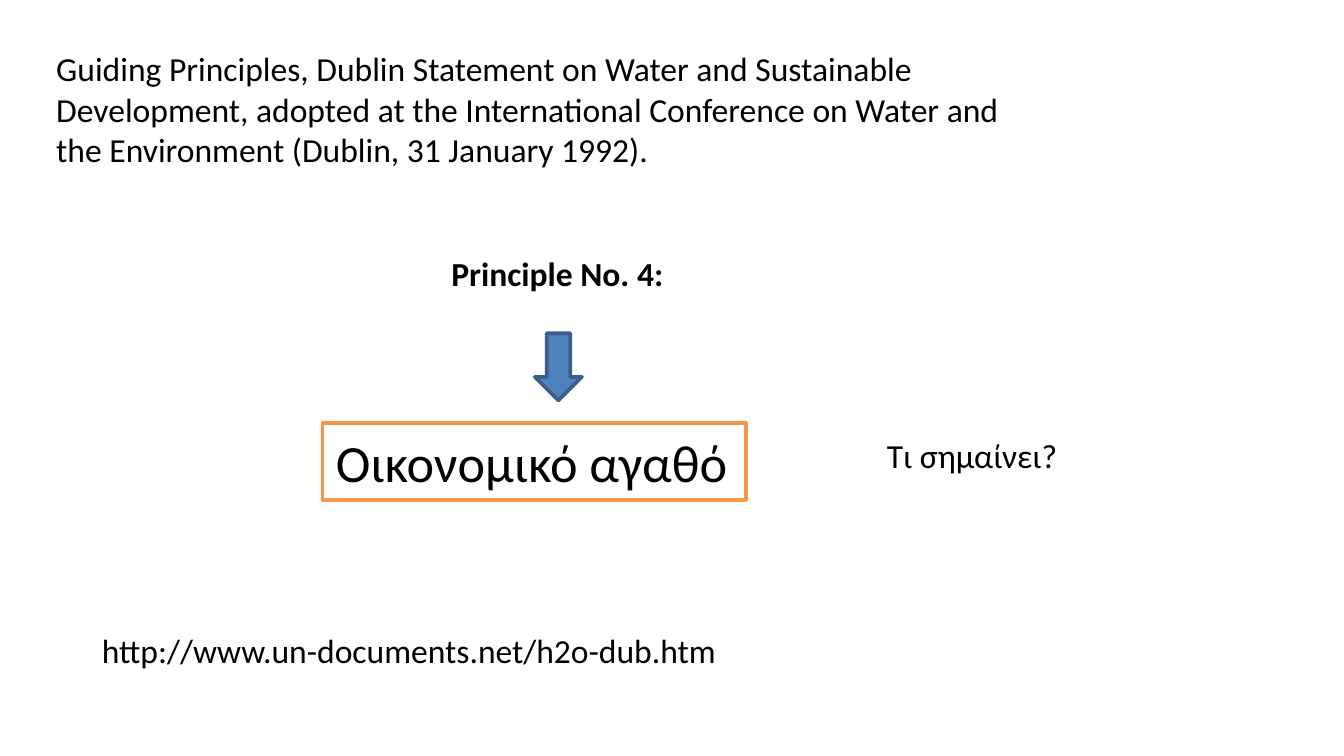
"""Build a slide on the fourth Dublin principle: water as an economic good."""
from pptx import Presentation
from pptx import util as u
from pptx.dml import color
from pptx.enum import shapes, text

WIDTH = 10
HEIGHT = WIDTH * 9 / 16
FONT = "Calibri"
CITATION = (
    "Guiding Principles, Dublin Statement on Water and Sustainable",
    "Development, adopted at the International Conference on Water and",
    "the Environment (Dublin, 31 January 1992).",
)


def paint(target, value):
    """Set a fill or font colour from a hex string."""
    target.rgb = color.RGBColor.from_string(value)


def place(left, top, width, height):
    """Turn lengths on a one-inch grid into slide units."""
    return [u.Inches(length) for length in (left, top, width, height)]


def add_block(page, kind, area, fill, line):
    """Add a filled and outlined preset shape."""
    block = page.shapes.add_shape(kind, *place(*area))
    block.shadow.inherit = False
    block.fill.solid()
    paint(block.fill.fore_color, fill)
    paint(block.line.color, line)
    block.line.width = u.Pt(2)
    return block


def write(box, *lines, size=18, bold=False, ink="000000"):
    """Write one paragraph per line into a box that fits its text."""
    frame = box.text_frame
    frame.word_wrap = False
    frame.auto_size = text.MSO_AUTO_SIZE.SHAPE_TO_FIT_TEXT
    frame.vertical_anchor = text.MSO_ANCHOR.TOP
    for index, line in enumerate(lines):
        para = frame.add_paragraph() if index else frame.paragraphs[0]
        para.alignment = text.PP_ALIGN.LEFT
        span = para.add_run()
        span.text = line
        span.font.name = FONT
        span.font.size = u.Pt(size)
        span.font.bold = bold
        paint(span.font.color, ink)


def add_label(page, area, *lines, **style):
    """Add a plain text box."""
    write(page.shapes.add_textbox(*place(*area)), *lines, **style)


def main():
    """Build and save the slide."""
    deck = Presentation()
    deck.slide_width, deck.slide_height = u.Inches(WIDTH), u.Inches(HEIGHT)
    page = deck.slides.add_slide(deck.slide_layouts[6])

    add_label(page, (0.32, 0.31, 7.31, 1.01), *CITATION)
    term = add_block(page, shapes.MSO_SHAPE.RECTANGLE,
                     (2.4, 3.15, 3.15, 0.57), "FFFFFF", "F79646")
    write(term, "Οικονομικό αγαθό", size=28)
    add_label(page, (6.5, 3.19, 1.49, 0.4), "Τι σημαίνει?")
    add_label(page, (3.26, 1.83, 1.79, 0.4), "Principle No. 4:", bold=True)
    add_block(page, shapes.MSO_SHAPE.DOWN_ARROW,
              (3.98, 2.48, 0.35, 0.5), "4F81BD", "3A5F8C")
    add_label(page, (0.66, 4.64, 4.83, 0.4),
              "http://www.un-documents.net/h2o-dub.htm")
    deck.save("out.pptx")


if __name__ == "__main__":
    main()
